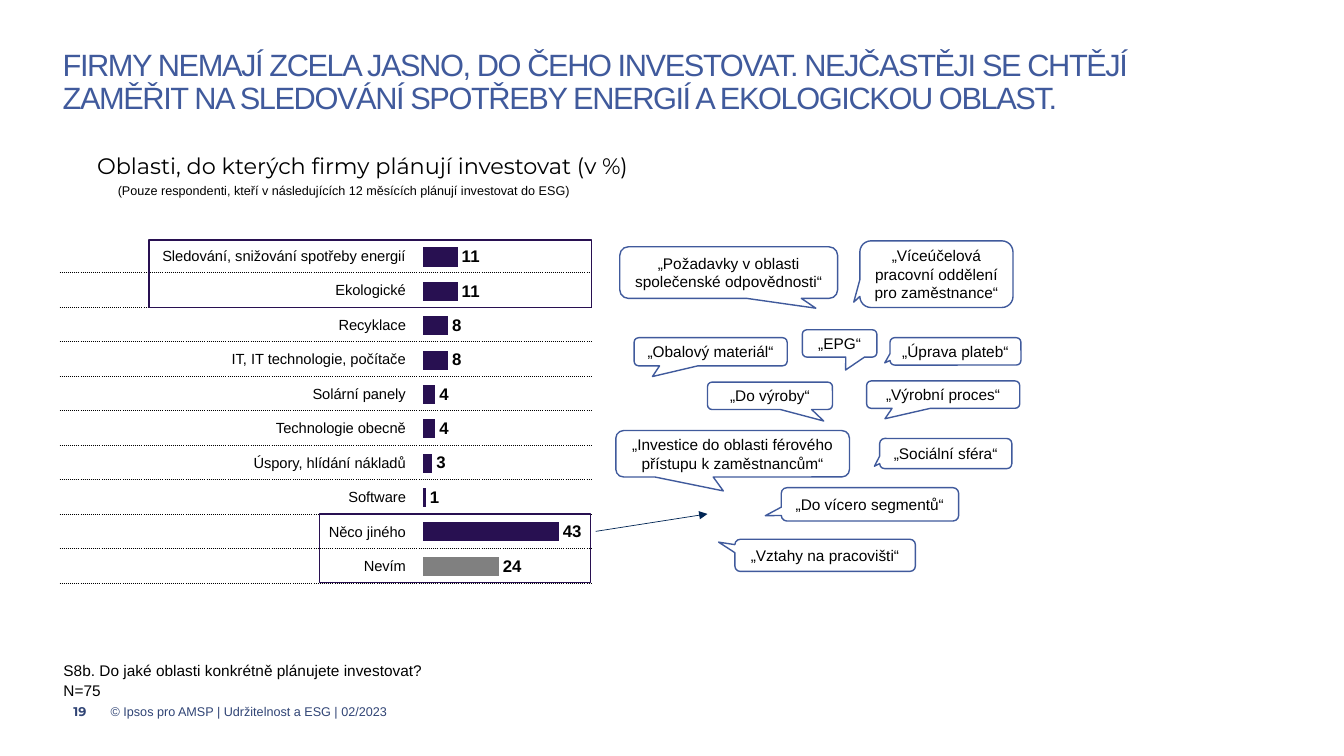
import pptx
import pptx.chart.data
import pptx.dml.color
import pptx.enum.chart
import pptx.enum.shapes
import pptx.enum.text
import pptx.oxml
import pptx.oxml.ns
import pptx.util

Cm, Pt = pptx.util.Cm, pptx.util.Pt
qn = pptx.oxml.ns.qn
ALIGN = pptx.enum.text.PP_ALIGN
ANCHOR = pptx.enum.text.MSO_ANCHOR
SHAPE = pptx.enum.shapes.MSO_SHAPE
BLUE, NAVY, PURPLE, BLACK = "405A9C", "304475", "281051", "000000"


def rgb(value):
    return pptx.dml.color.RGBColor.from_string(value)


def write(tf, text, size, color=BLACK, font="Arial", align=ALIGN.LEFT,
          anchor=ANCHOR.TOP, insets=(0.25, 0.13, 0.25, 0.13), spacing=None):
    """Fill a text frame with one formatted paragraph; insets are in cm."""
    tf.word_wrap = True
    tf.vertical_anchor = anchor
    tf.margin_left, tf.margin_top, tf.margin_right, tf.margin_bottom = map(Cm, insets)
    p = tf.paragraphs[0]
    p.text = text
    p.alignment = align
    p.line_spacing = spacing
    for r in p.runs:
        r.font.size = Pt(size)
        r.font.name = font
        r.font.color.rgb = rgb(color)
    return p


prs = pptx.Presentation()
prs.slide_width, prs.slide_height = Cm(33.87), Cm(19.05)
s = prs.slides.add_slide(prs.slide_layouts[5])

# Table of areas
areas = [
    ("Sledování, snižování spotřeby energií", 11), ("Ekologické", 11),
    ("Recyklace", 8), ("IT, IT technologie, počítače", 8),
    ("Solární panely", 4), ("Technologie obecně", 4),
    ("Úspory, hlídání nákladů", 3), ("Software", 1),
    ("Něco jiného", 43), ("Nevím", 24),
]
table = s.shapes.add_table(len(areas) + 1, 2, Cm(1.5), Cm(4.88), Cm(13.41), Cm(9.82)).table
table.first_row = table.horz_banding = False
style = table._tbl.tblPr.find(qn("a:tableStyleId"))
style.text = "{2D5ABB26-0587-4C30-8999-92F81FD0307C}"
table.columns[0].width, table.columns[1].width = Cm(8.76), Cm(4.65)
dotted = (f'<a:lnB {pptx.oxml.ns.nsdecls("a")} w="12700"><a:solidFill><a:srgbClr val="{BLACK}"/>'
          '</a:solidFill><a:prstDash val="sysDot"/></a:lnB>')
for i, row in enumerate(table.rows):
    row.height = Cm(0.87 if i else 1.12)
    for cell in row.cells:
        cell.margin_left = cell.margin_top = cell.margin_right = Cm(0.03)
        cell.margin_bottom = 0
        cell.vertical_anchor = ANCHOR.MIDDLE
        cell.text_frame.paragraphs[0].font.size = Pt(10.5)
        if i:
            cell._tc.get_or_add_tcPr().append(pptx.oxml.parse_xml(dotted))
        cell.fill.background()
    if i:
        p = row.cells[0].text_frame.paragraphs[0]
        p.text = areas[i - 1][0]
        p.alignment = ALIGN.RIGHT
        p.runs[0].font.size = Pt(10.5)
        p.runs[0].font.name = "Arial"
        p.runs[0].font.color.rgb = rgb(BLACK)

# Bar chart, with one spare category below the last bar
data = pptx.chart.data.CategoryChartData()
data.categories = [str(n + 1) for n in range(len(areas) + 1)]
data.add_series("Series 1", [value for _, value in areas] + [None])
chart = s.shapes.add_chart(pptx.enum.chart.XL_CHART_TYPE.BAR_CLUSTERED,
                           Cm(9.65), Cm(4.72), Cm(8.59), Cm(10.85), data).chart
chart.has_legend = chart.has_title = False
chart.font.size, chart.font.name = Pt(11), "Arial"
chart.font.color.rgb = rgb(BLACK)
chart.category_axis.reverse_order = True
chart.category_axis.visible = chart.value_axis.visible = False
chart.value_axis.has_major_gridlines = False
chart.value_axis.minimum_scale, chart.value_axis.maximum_scale = 0, 95
chart.value_axis.major_unit = 20
plot = chart.plots[0]
plot.gap_width = 80
plot.vary_by_categories = False
bars = plot.series[0]
bars.format.fill.solid()
bars.format.fill.fore_color.rgb = rgb(PURPLE)
unsure = bars.points[len(areas) - 1].format.fill
unsure.solid()
unsure.fore_color.rgb = rgb("808080")
labels = bars.data_labels
labels.show_value = True
labels.number_format, labels.number_format_is_linked = "#,##0", False
labels.position = pptx.enum.chart.XL_LABEL_POSITION.OUTSIDE_END
labels.font.size, labels.font.bold, labels.font.name = Pt(12), True, "Arial"
labels.font.color.rgb = rgb(BLACK)
c_ns = pptx.oxml.ns.nsdecls("c", "a")
c_chart = chart._chartSpace.find(qn("c:chart"))
c_chart.addnext(pptx.oxml.parse_xml(
    f"<c:spPr {c_ns}><a:noFill/><a:ln><a:noFill/></a:ln></c:spPr>"))
area = c_chart.find(qn("c:plotArea"))
for old in area.findall(qn("c:layout")):
    area.remove(old)
area.insert(0, pptx.oxml.parse_xml(
    f'<c:layout {c_ns}><c:manualLayout><c:layoutTarget val="inner"/>'
    '<c:xMode val="edge"/><c:yMode val="edge"/><c:x val="0.117"/><c:y val="0.122"/>'
    '<c:w val="0.883"/><c:h val="0.878"/></c:manualLayout></c:layout>'))

# Title
title = s.shapes.title
title.left, title.top, title.width, title.height = Cm(1.12), Cm(1.12), Cm(28.58), Cm(1.96)
p = write(title.text_frame,
          "FIRMY NEMAJÍ ZCELA JASNO, DO ČEHO INVESTOVAT. NEJČASTĚJI SE CHTĚJÍ "
          "ZAMĚŘIT NA SLEDOVÁNÍ SPOTŘEBY ENERGIÍ A EKOLOGICKOU OBLAST.",
          22, BLUE, insets=(0.46, 0.13, 0.46, 0.13), spacing=0.9)
title.text_frame.auto_size = pptx.enum.text.MSO_AUTO_SIZE.NONE
p.runs[0]._r.get_or_add_rPr().set("spc", "-100")

# Heading, base, question and footer
texts = [
    ((1.57, 4.01, 15.14, 0.53), "Oblasti, do kterých firmy plánují investovat (v %)", 16,
     dict(font="Montserrat", align=ALIGN.CENTER, insets=(0, 0, 0, 0), spacing=Pt(14))),
    ((2.72, 4.47, 12.14, 0.64),
     "(Pouze respondenti, kteří v následujících 12 měsících plánují investovat do ESG)", 9, {}),
    ((1.35, 16.51, 28.85, 1.22),
     "S8b. Do jaké oblasti konkrétně plánujete investovat?\vN=75", 11, dict(spacing=Pt(14))),
    ((1.6, 17.42, 0.99, 1.02), "19", 9,
     dict(color=NAVY, font="Montserrat", align=ALIGN.CENTER, anchor=ANCHOR.MIDDLE,
          insets=(0, 0.13, 0.16, 0.13))),
    ((2.79, 17.42, 25.58, 1.02), "© Ipsos pro AMSP | Udržitelnost a ESG | 02/2023", 9,
     dict(color=NAVY, anchor=ANCHOR.MIDDLE, insets=(0, 0.13, 0, 0.13))),
]
for box, text, size, options in texts:
    p = write(s.shapes.add_textbox(*map(Cm, box)).text_frame, text, size, **options)
    p.runs[0].font.bold = text == "19"

# Arrow from "Něco jiného" to the quotes
arrow = s.shapes.add_connector(pptx.enum.shapes.MSO_CONNECTOR.STRAIGHT,
                               Cm(15.01), Cm(13.39), Cm(17.83), Cm(12.95))
arrow.line.color.rgb = rgb("002554")
arrow.line.width = Pt(0.5)
a_ns = pptx.oxml.ns.nsdecls("a")
arrow.line._get_or_add_ln().append(pptx.oxml.parse_xml(f'<a:tailEnd {a_ns} type="triangle"/>'))
arrow._element.spPr.append(pptx.oxml.parse_xml(f"<a:effectLst {a_ns}/>"))

# Quotes: text, box, pointer tip relative to the centre
quotes = [
    ("Do vícero segmentů", (19.69, 12.29, 4.47, 0.84), (-0.59, 0.34)),
    ("Vztahy na pracovišti", (18.52, 13.59, 4.55, 0.81), (-0.59, -0.41)),
    ("Investice do oblasti férového přístupu k zaměstnancům",
     (15.52, 10.85, 5.89, 1.17), (-0.04, 0.8)),
    ("Sociální sféra", (22.17, 11.05, 3.33, 0.76), (-0.54, 0.42)),
    ("Výrobní proces", (21.84, 9.6, 3.86, 0.69), (-0.38, 0.88)),
    ("Do výroby", (17.83, 9.63, 3.15, 0.69), (0.43, 0.92)),
    ("EPG", (20.22, 8.31, 1.88, 0.69), (0.08, 0.97)),
    ("Obalový materiál", (15.98, 8.51, 3.86, 0.71), (-0.38, 0.88)),
    ("Úprava plateb", (22.43, 8.51, 3.3, 0.69), (-0.54, 0.42)),
    ("Víceúčelová pracovní oddělení pro zaměstnance",
     (21.67, 6.07, 3.86, 1.68), (-0.54, 0.42)),
    ("Požadavky v oblasti společenské odpovědnosti",
     (15.62, 6.22, 5.49, 1.3), (0.4, 0.69)),
]
for text, box, tip in quotes:
    sp = s.shapes.add_shape(SHAPE.ROUNDED_RECTANGULAR_CALLOUT, *map(Cm, box))
    sp.shadow.inherit = False
    sp.adjustments[0], sp.adjustments[1] = tip
    sp.fill.solid()
    sp.fill.fore_color.rgb = rgb("FFFFFF")
    sp.line.color.rgb = rgb(BLUE)
    sp.line.width = Pt(1)
    write(sp.text_frame, f"„{text}“", 11, align=ALIGN.CENTER, anchor=ANCHOR.MIDDLE)

# Frames around the top two and bottom two rows
for frame in [(8.05, 12.95, 6.83, 1.73), (3.76, 6.05, 11.15, 1.7)]:
    sp = s.shapes.add_shape(SHAPE.RECTANGLE, *map(Cm, frame))
    sp.shadow.inherit = False
    sp.fill.background()
    sp.line.color.rgb = rgb(PURPLE)
    sp.line.width = Pt(1)

prs.save("out.pptx")
